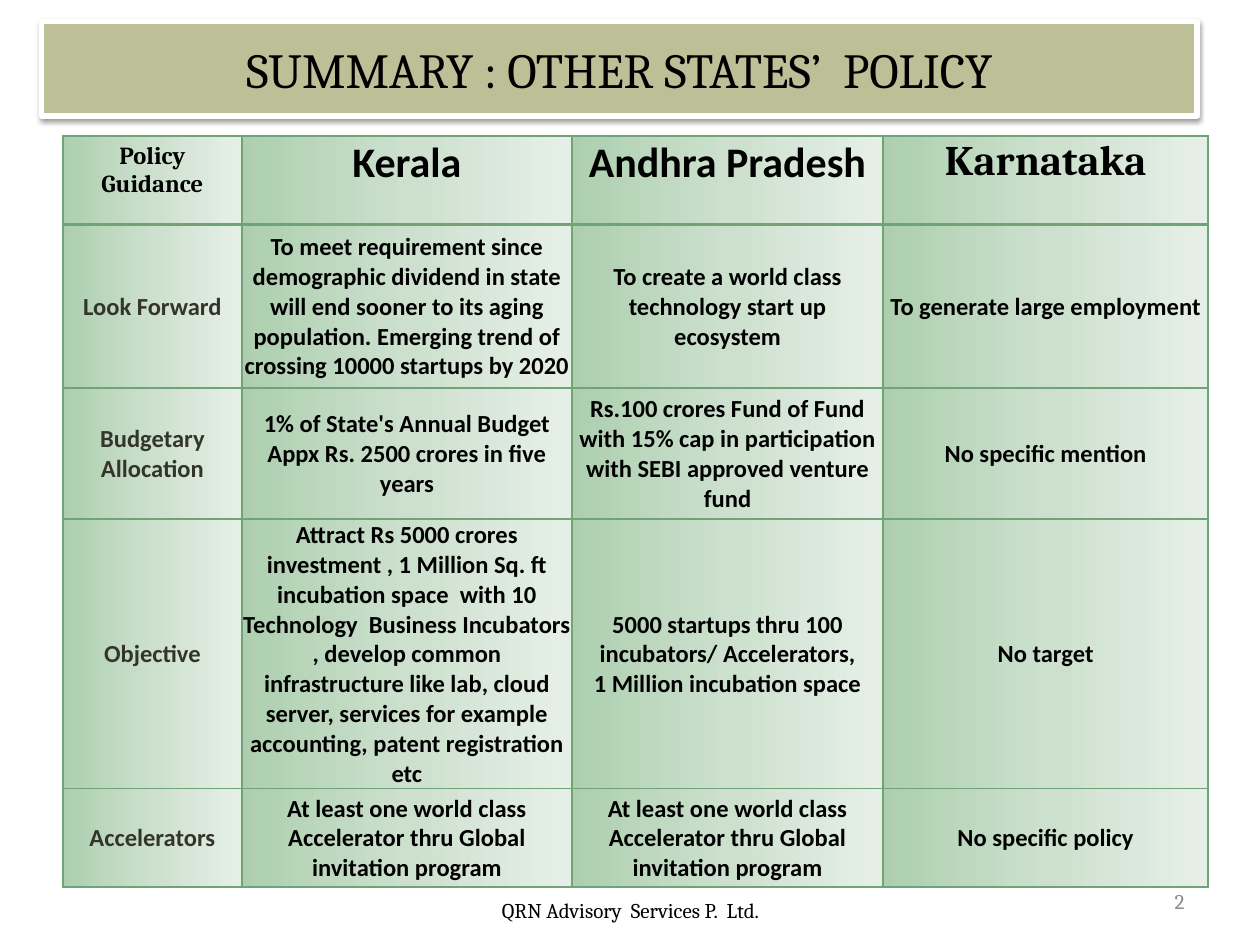
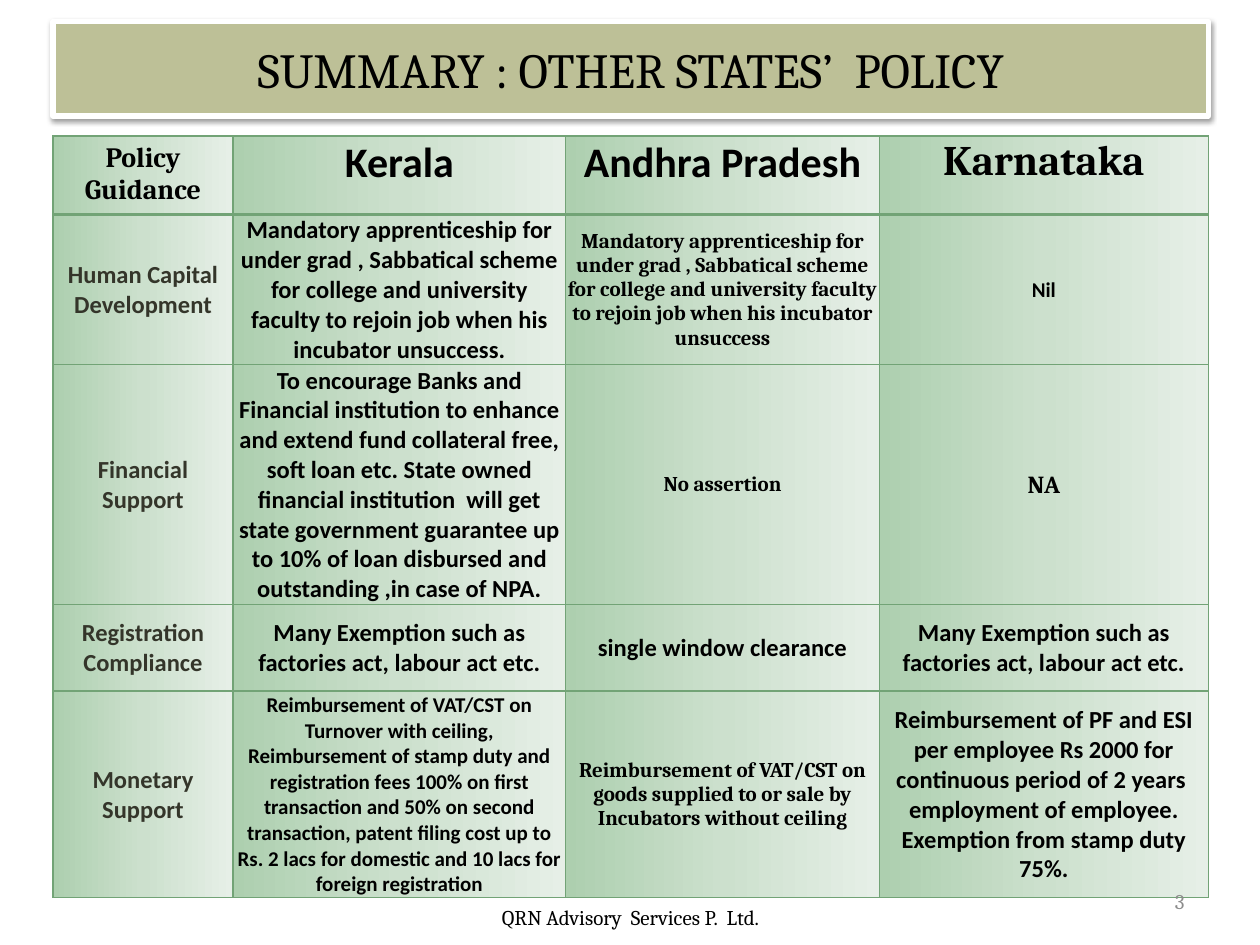
from collections import namedtuple

from lxml import etree
from pptx import Presentation
from pptx.dml.color import RGBColor
from pptx.enum.text import MSO_ANCHOR as Anchor, PP_ALIGN as Align
from pptx.oxml import parse_xml
from pptx.oxml.ns import nsdecls, qn
from pptx.util import Inches, Pt

COLORS = {
    "band": "BDC097",
    "white": "FFFFFF",
    "text": "000000",
    "label": "34352A",
    "number": "8C8C8C",
    "border": "72A376",
    "cell_start": "ADCFAF",
    "cell_middle": "CCE0CD",
    "cell_end": "E6EFE7",
}
SANS, SERIF = "Calibri", "Cambria"
TITLE = "SUMMARY : OTHER STATES’  POLICY"
FOOTER = "QRN Advisory  Services P.  Ltd."
STATES = [("Kerala", 24, SANS), ("Andhra Pradesh", 24, SANS), ("Karnataka", 24, SERIF)]
TIGHT, ROOMY = (0.01, 0.01, 0.01, 0), (0.1, 0.05, 0.1, 0.05)

# A cell is plain text, or (text, size, font); a newline starts a new paragraph.
Page = namedtuple(
    "Page", "number title_left table_left columns heights guidance_size footer_top rows")

ACCELERATOR = "At least one world class Accelerator thru Global invitation program"
EXEMPTION = "Many Exemption such as factories act, labour act etc."
APPRENTICESHIP = (
    "Mandatory apprenticeship for under grad , Sabbatical scheme for college and "
    "university faculty to rejoin job when his incubator unsuccess")

PAGES = [
    Page(2, 0.33, 0.5, [1.42, 2.62, 2.47, 2.58], [0.7, 1.3, 1.04, 2.13, 0.78], 14, 7.02, [
        ["Look Forward",
         "To meet requirement since demographic dividend in state will end sooner to its "
         "aging population. Emerging trend of crossing 10000 startups by 2020",
         "To create a world class technology start up ecosystem",
         "To generate large employment"],
        ["Budgetary Allocation",
         "1% of State's Annual Budget Appx Rs. 2500 crores in five years",
         "Rs.100 crores Fund of Fund with 15% cap in participation with SEBI approved "
         "venture fund",
         "No specific mention"],
        ["Objective",
         "Attract Rs 5000 crores investment , 1 Million Sq. ft incubation space  with 10 "
         "Technology  Business Incubators , develop common infrastructure like lab, cloud "
         "server, services for example accounting, patent registration etc",
         "5000 startups thru 100 incubators/ Accelerators,\n1 Million incubation space",
         "No target"],
        ["Accelerators", ACCELERATOR, ACCELERATOR, "No specific policy"],
    ]),
    Page(3, 0.42, 0.42, [1.43, 2.64, 2.49, 2.61], [0.62, 1.19, 1.9, 0.69, 1.63], 16, 7.08, [
        ["Human Capital Development",
         APPRENTICESHIP + ".",
         (APPRENTICESHIP, 12, SERIF),
         ("Nil", 12, SANS)],
        ["Financial\nSupport",
         "To encourage Banks and Financial institution to enhance and extend fund "
         "collateral free, soft loan etc. State owned financial institution  will get "
         "state government guarantee up to 10% of loan disbursed and outstanding ,in "
         "case of NPA.",
         ("No assertion", 12, SERIF),
         ("NA", 14, SERIF)],
        ["Registration Compliance", EXEMPTION, "single window clearance", EXEMPTION],
        ["Monetary Support",
         ("Reimbursement of VAT/CST on Turnover with ceiling, Reimbursement of stamp duty "
          "and registration fees 100% on first transaction and 50% on second transaction, "
          "patent filing cost up to\nRs. 2 lacs for domestic and 10 lacs for foreign "
          "registration", 12, SANS),
         ("Reimbursement of VAT/CST on goods supplied to or sale by Incubators without "
          "ceiling", 12, SERIF),
         "Reimbursement of PF and ESI per employee Rs 2000 for continuous period of 2 years "
         " employment of employee. Exemption from stamp duty 75%."],
    ]),
]


class DeckBuilder:
    """Holds the shared style and the slide being built."""

    def __init__(self):
        self.presentation = Presentation()
        self.presentation.slide_width = Inches(10)
        self.presentation.slide_height = Inches(7.5)
        self.slide = None

    def new_slide(self):
        self.slide = self.presentation.slides.add_slide(self.presentation.slide_layouts[5])

    def add_text(self, frame, text, size, font=SERIF, color="text", bold=False,
                 align=Align.CENTER):
        frame.word_wrap = True
        for index, line in enumerate(text.split("\n")):
            paragraph = frame.add_paragraph() if index else frame.paragraphs[0]
            paragraph.alignment = align
            run = paragraph.add_run()
            run.text = line
            run.font.size, run.font.name, run.font.bold = Pt(size), font, bold
            run.font.color.rgb = RGBColor.from_string(COLORS[color])

    def title(self, text, left):
        shape = self.slide.shapes.title
        shape.left, shape.top = Inches(left), Inches(0.17)
        shape.width, shape.height = Inches(9.17), Inches(0.75)
        shape.fill.solid()
        shape.fill.fore_color.rgb = RGBColor.from_string(COLORS["band"])
        shape.line.color.rgb = RGBColor.from_string(COLORS["white"])
        shape.line.width = Pt(3)
        shape.element.spPr.append(parse_xml(
            f'<a:effectLst {nsdecls("a")}><a:outerShdw blurRad="{Pt(3.1)}" '
            f'dist="{Pt(1.6)}" dir="5400000" rotWithShape="0">'
            f'<a:srgbClr val="{COLORS["text"]}"><a:alpha val="38000"/></a:srgbClr>'
            '</a:outerShdw></a:effectLst>'))
        shape.text_frame.vertical_anchor = Anchor.MIDDLE
        self.add_text(shape.text_frame, text, 28)

    def text_box(self, text, left, top, width, color, align):
        box = self.slide.shapes.add_textbox(
            Inches(left), Inches(top), Inches(width), Inches(0.4))
        box.text_frame.vertical_anchor = Anchor.MIDDLE
        self.add_text(box.text_frame, text, 12, color=color, align=align)

    def paint_cell(self, cell, top_width, bottom_width):
        """Set the cell's borders and its left-to-right gradient."""
        properties = cell._tc.get_or_add_tcPr()
        sides = {"lnL": 1, "lnR": 1, "lnT": top_width, "lnB": bottom_width}
        for side, width in sides.items():
            line = etree.SubElement(properties, qn(f"a:{side}"), w=str(Pt(width)))
            fill = etree.SubElement(line, qn("a:solidFill"))
            etree.SubElement(fill, qn("a:srgbClr"), val=COLORS["border"])
        gradient = etree.SubElement(properties, qn("a:gradFill"))
        stops = etree.SubElement(gradient, qn("a:gsLst"))
        for index, name in enumerate(["cell_start", "cell_middle", "cell_end"]):
            stop = etree.SubElement(stops, qn("a:gs"), pos=str(index * 50000))
            etree.SubElement(stop, qn("a:srgbClr"), val=COLORS[name])
        etree.SubElement(gradient, qn("a:lin"), ang="0", scaled="0")

    def table(self, rows, left, columns, heights):
        table = self.slide.shapes.add_table(
            len(heights), len(columns), Inches(left), Inches(1.08),
            Inches(sum(columns)), Inches(sum(heights))).table
        table.first_row = table.horz_banding = False
        for column, width in zip(table.columns, columns):
            column.width = Inches(width)
        for row, height in zip(table.rows, heights):
            row.height = Inches(height)
        for row_index, row in enumerate(rows):
            for column_index, content in enumerate(row):
                cell = table.cell(row_index, column_index)
                is_header, is_label = row_index == 0, column_index == 0
                margins = ROOMY if is_header and is_label else TIGHT
                (cell.margin_left, cell.margin_top,
                 cell.margin_right, cell.margin_bottom) = map(Inches, margins)
                cell.vertical_anchor = Anchor.TOP if is_header else Anchor.MIDDLE
                text, size, font = (content, 14, SANS) if isinstance(content, str) else content
                color = "label" if is_label and not is_header else "text"
                self.add_text(cell.text_frame, text, size, font, color, bold=True)
                self.paint_cell(cell, 2 if row_index == 1 else 1, 2 if is_header else 1)

    def policy_slide(self, page):
        self.new_slide()
        self.title(TITLE, page.title_left)
        header = [("Policy\nGuidance", page.guidance_size, SERIF), *STATES]
        self.table([header, *page.rows], page.table_left, page.columns, page.heights)
        self.text_box(str(page.number), 7.17, 6.95, 2.33, "number", Align.RIGHT)
        self.text_box(FOOTER, 3.42, page.footer_top, 3.17, "text", Align.CENTER)


def main():
    deck = DeckBuilder()
    for page in PAGES:
        deck.policy_slide(page)
    deck.presentation.save("out.pptx")


if __name__ == "__main__":
    main()
